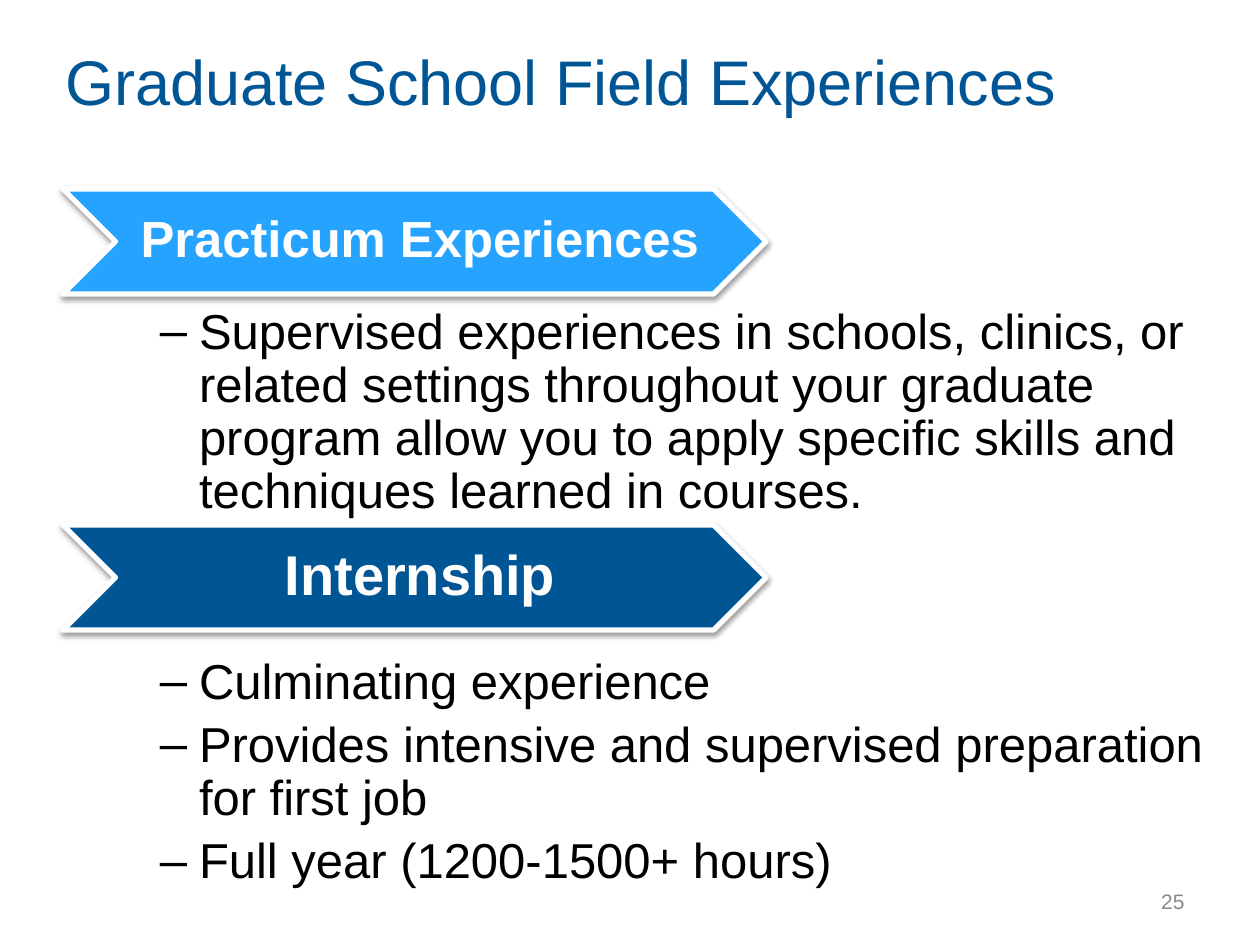
from lxml import etree
from pptx import Presentation
from pptx.dml.color import RGBColor
from pptx.enum.shapes import MSO_SHAPE
from pptx.enum.text import MSO_ANCHOR, PP_ALIGN
from pptx.oxml.ns import qn
from pptx.util import Inches, Pt

CHEVRON = MSO_SHAPE.CHEVRON
MIDDLE, TOP = MSO_ANCHOR.MIDDLE, MSO_ANCHOR.TOP
LEFT, CENTER, RIGHT = PP_ALIGN.LEFT, PP_ALIGN.CENTER, PP_ALIGN.RIGHT

WIDE, HIGH = Inches(10), Inches(7.5)
ROW = 1 / 90
HUES = {
    "navy": "005695",
    "sky": "26A3FF",
    "white": "FFFFFF",
    "black": "000000",
    "gray": "898989",
}


def tint(name):
    return RGBColor.from_string(HUES[name])


def place(x, y, w, h):
    return int(WIDE * x), int(HIGH * y), int(WIDE * w), int(HIGH * h)


def style(par, size, hue, align=LEFT, bold=False):
    par.alignment = align
    font = par.font
    font.name, font.size, font.bold = "Arial", Pt(size), bold
    font.color.rgb = tint(hue)


def set_frame(frame, anchor, side=0.1, edge=0.05):
    frame.word_wrap = True
    frame.vertical_anchor = anchor
    frame.margin_left, frame.margin_right = Inches(side), Inches(edge)
    frame.margin_top = frame.margin_bottom = Inches(edge)


def add_label(slide, box, text, size, hue, align=LEFT):
    frame = slide.shapes.add_textbox(*place(*box)).text_frame
    set_frame(frame, MIDDLE, edge=0.1)
    par = frame.paragraphs[0]
    par.text = text
    style(par, size, hue, align)


def add_shade(shape):
    effects = etree.SubElement(shape._element.spPr, qn("a:effectLst"))
    shade = etree.SubElement(
        effects, qn("a:outerShdw"), blurRad=str(Pt(3.1)), dist=str(Pt(1.6)),
        dir="5400000", rotWithShape="0")
    color = etree.SubElement(shade, qn("a:srgbClr"), val=HUES["black"])
    etree.SubElement(color, qn("a:alpha"), val="38000")


def add_banner(slide, y, text, size, hue):
    shape = slide.shapes.add_shape(CHEVRON, *place(0.05, y, 0.558, 10 * ROW))
    shape.fill.solid()
    shape.fill.fore_color.rgb = tint(hue)
    shape.line.color.rgb = tint("white")
    shape.line.width = Pt(3)
    add_shade(shape)
    set_frame(shape.text_frame, MIDDLE, side=0.13, edge=0.04)
    par = shape.text_frame.paragraphs[0]
    par.text = text
    par.line_spacing = 0.9
    style(par, size, "white", CENTER, True)


def add_list(slide, box, items):
    frame = slide.shapes.add_textbox(*place(*box)).text_frame
    set_frame(frame, TOP, side=0, edge=0)
    for i, item in enumerate(items):
        par = frame.paragraphs[0] if i == 0 else frame.add_paragraph()
        par.text = item
        props = par._p.get_or_add_pPr()
        props.set("marL", str(Inches(0.81)))
        props.set("indent", str(-Inches(0.31)))
        etree.SubElement(props, qn("a:buFont"), typeface="Arial")
        etree.SubElement(props, qn("a:buChar"), char="–")
        par.line_spacing = 0.9
        par.space_before = Pt(6 if i else 0)
        style(par, 28, "black")


def main():
    deck = Presentation()
    deck.slide_width, deck.slide_height = WIDE, HIGH
    slide = deck.slides.add_slide(deck.slide_layouts[6])
    add_label(slide, (0.042, 0, 0.9, 0.17),
              "Graduate School Field Experiences", 36, "navy")
    add_banner(slide, 18 * ROW, "Practicum Experiences", 29, "sky")
    add_banner(slide, 50 * ROW, "Internship", 32, "navy")
    add_list(slide, (0.077, 0.325, 0.93, 0.23), [
        "Supervised experiences in schools, clinics, or related settings "
        "throughout your graduate program allow you to apply specific skills "
        "and techniques learned in courses."])
    add_list(slide, (0.077, 0.695, 0.93, 0.25), [
        "Culminating experience",
        "Provides intensive and supervised preparation for first job",
        "Full year (1200-1500+ hours)"])
    add_label(slide, (0.717, 0.927, 0.233, 0.053), "25", 12, "gray", RIGHT)
    deck.save("out.pptx")


if __name__ == "__main__":
    main()
